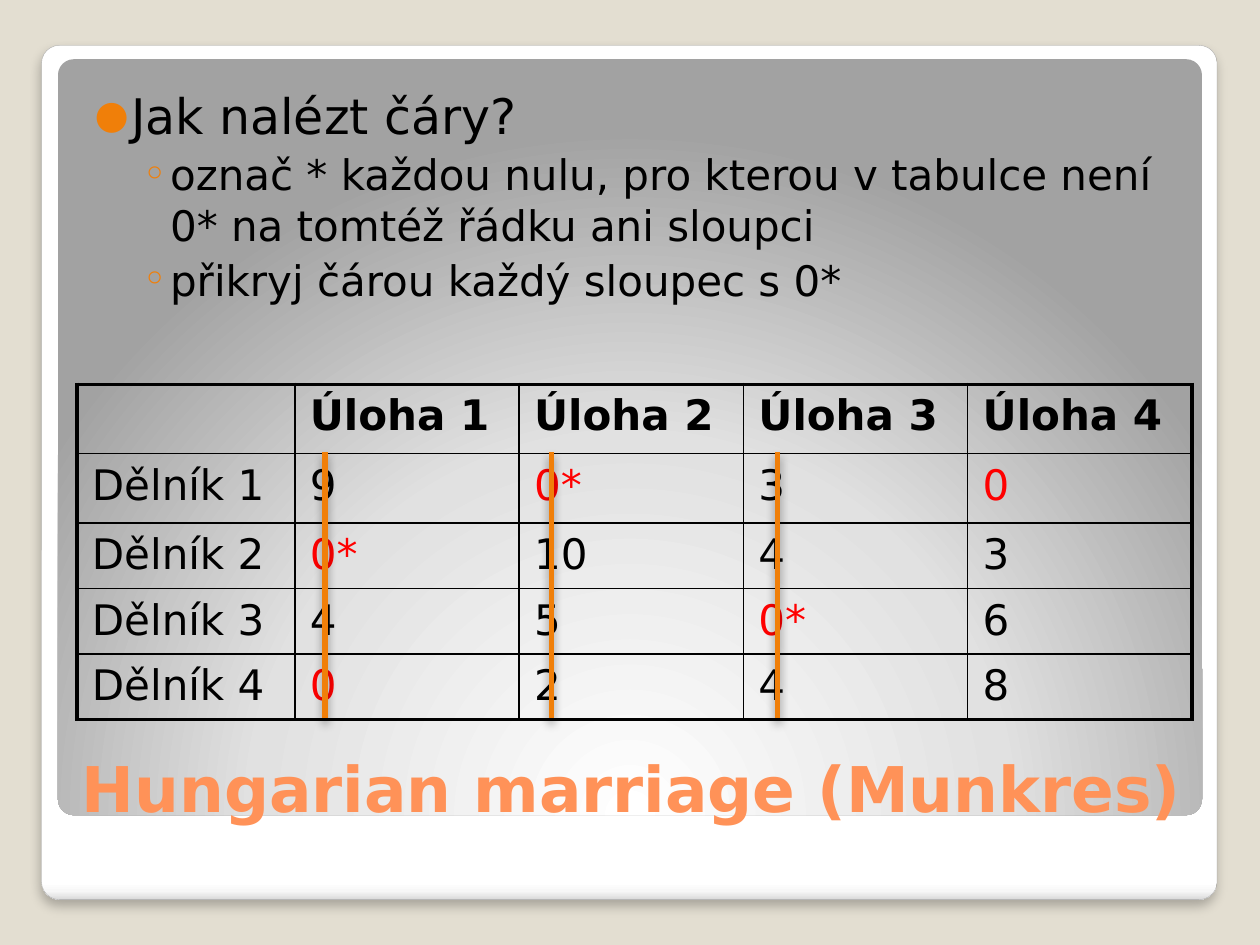
from dataclasses import dataclass

from pptx import Presentation
from pptx.dml.color import RGBColor
from pptx.enum.shapes import MSO_CONNECTOR, MSO_SHAPE
from pptx.enum.text import MSO_ANCHOR, MSO_AUTO_SIZE, PP_ALIGN
from pptx.oxml import parse_xml
from pptx.oxml.ns import nsdecls
from pptx.util import Inches, Pt


@dataclass(frozen=True)
class Theme:
    font: str = "DejaVu Sans"
    background: str = "E3DED1"
    frame_line: str = "A4A4A4"
    title: str = "FF9258"
    text: str = "000000"
    zero: str = "FF0000"
    accent: str = "F07F09"
    title_size: int = 36
    lead_size: int = 28
    body_size: int = 24


@dataclass(frozen=True)
class Shadow:
    alpha: int
    blur: float
    distance: float


@dataclass(frozen=True)
class Panel:
    box: tuple
    stops: tuple
    direction: str


@dataclass(frozen=True)
class Bullet:
    text: str
    size: int
    level: int
    margin: float
    hang: float
    mark: str
    scale: int


THEME = Theme()
FRAME = Panel(
    (0.33, 0.36, 9.33, 6.78),
    ((0, "FFFFFF"), (98, "FFFFFF"), (99, "F7F7F7"), (100, "DADADA")),
    '<a:lin ang="5400000" scaled="0"/>',
)
INNER = Panel(
    (0.46, 0.47, 9.08, 6),
    ((0, "FFFFFF"), (55, "E1E1E1"), (100, "A2A2A2")),
    '<a:path path="circle"><a:fillToRect l="50000" t="175000" r="50000" b="-75000"/></a:path>',
)
BULLETS = (
    Bullet("Jak nalézt čáry?", THEME.lead_size, 0, 0.29, 0.29, "●", 80),
    Bullet("označ * každou nulu, pro kterou v tabulce není 0* na tomtéž řádku ani sloupci",
           THEME.body_size, 1, 0.6, 0.22, "◦", 100),
    Bullet("přikryj čárou každý sloupec s 0*", THEME.body_size, 1, 0.6, 0.22, "◦", 100),
)
COSTS = (
    ("", "Úloha 1", "Úloha 2", "Úloha 3", "Úloha 4"),
    ("Dělník 1", "9", "0*", "3", "0"),
    ("Dělník 2", "0*", "10", "4", "3"),
    ("Dělník 3", "4", "5", "0*", "6"),
    ("Dělník 4", "0", "2", "4", "8"),
)
COL_WIDTHS = (1.73, 1.78, 1.78, 1.78, 1.78)
ROW_HEIGHTS = (0.55, 0.55, 0.49, 0.49, 0.49)


def rgb(color: str) -> RGBColor:
    return RGBColor.from_string(color)


def add_run(p, text: str, size: int, color: str = THEME.text, bold: bool = False) -> None:
    r = p.add_run()
    r.text = text
    r.font.name = THEME.font
    r.font.size = Pt(size)
    r.font.bold = bold
    r.font.color.rgb = rgb(color)


def set_shadow(sp, shadow: Shadow) -> None:
    sp._element.spPr.append(parse_xml(
        f'<a:effectLst {nsdecls("a")}><a:outerShdw blurRad="{Pt(shadow.blur)}" '
        f'dist="{Pt(shadow.distance)}" dir="5400000" algn="t" rotWithShape="0">'
        f'<a:srgbClr val="000000"><a:alpha val="{shadow.alpha * 1000}"/></a:srgbClr>'
        f'</a:outerShdw></a:effectLst>'))


def add_panel(s, panel: Panel):
    sp = s.shapes.add_shape(MSO_SHAPE.ROUNDED_RECTANGLE, *map(Inches, panel.box))
    sp.adjustments[0] = 0.021
    stops = "".join(f'<a:gs pos="{pos * 1000}"><a:srgbClr val="{color}"/></a:gs>'
                    for pos, color in panel.stops)
    sp._element.spPr.insert(2, parse_xml(
        f'<a:gradFill {nsdecls("a")} rotWithShape="1"><a:gsLst>{stops}</a:gsLst>'
        f'{panel.direction}</a:gradFill>'))
    return sp


def add_background(s) -> None:
    s.background.fill.solid()
    s.background.fill.fore_color.rgb = rgb(THEME.background)
    frame = add_panel(s, FRAME)
    frame.line.color.rgb = rgb(THEME.frame_line)
    frame.line.width = Pt(0.16)
    set_shadow(frame, Shadow(25, 6, 4))
    inner = add_panel(s, INNER)
    inner.line.fill.background()
    inner.shadow.inherit = False


def add_title(s, text: str) -> None:
    title = s.shapes.title
    title.left, title.top, title.width, title.height = map(Inches, (0.55, 5.45, 8.95, 1.15))
    s.shapes._spTree.append(title._element)
    tf = title.text_frame
    tf.auto_size = MSO_AUTO_SIZE.NONE
    tf.vertical_anchor = MSO_ANCHOR.BOTTOM
    p = tf.paragraphs[0]
    p.alignment = PP_ALIGN.LEFT
    add_run(p, text, THEME.title_size, THEME.title, True)


def add_bullets(s, bullets: tuple) -> None:
    tf = s.shapes.add_textbox(*map(Inches, (0.55, 0.58, 8.95, 5.28))).text_frame
    tf.word_wrap = True
    tf.margin_left, tf.margin_top, tf.margin_right, tf.margin_bottom = map(
        Inches, (0.2, 0.1, 0.1, 0.05))
    for i, bullet in enumerate(bullets):
        p = tf.add_paragraph() if i else tf.paragraphs[0]
        p.level = bullet.level
        p.space_before = Pt(2.5)
        pPr = p._p.get_or_add_pPr()
        pPr.set("marL", str(Inches(bullet.margin)))
        pPr.set("indent", str(-Inches(bullet.hang)))
        for xml in (f'<a:buClr {nsdecls("a")}><a:srgbClr val="{THEME.accent}"/></a:buClr>',
                    f'<a:buSzPct {nsdecls("a")} val="{bullet.scale * 1000}"/>',
                    f'<a:buFont {nsdecls("a")} typeface="{THEME.font}"/>',
                    f'<a:buChar {nsdecls("a")} char="{bullet.mark}"/>'):
            pPr.append(parse_xml(xml))
        add_run(p, bullet.text, bullet.size)


def set_borders(cell, outer: dict) -> None:
    tcPr = cell._tc.get_or_add_tcPr()
    for side, is_outer in outer.items():
        tcPr.append(parse_xml(
            f'<a:ln{side} {nsdecls("a")} w="{Pt(2.25 if is_outer else 1)}"><a:solidFill>'
            f'<a:srgbClr val="{THEME.text}"/></a:solidFill></a:ln{side}>'))


def add_cost_table(s, rows: tuple) -> None:
    n_rows, n_cols = len(rows), len(rows[0])
    box = (0.61, 3.05, sum(COL_WIDTHS), sum(ROW_HEIGHTS))
    table = s.shapes.add_table(n_rows, n_cols, *map(Inches, box)).table
    table.first_row = table.horz_banding = False
    for col, width in zip(table.columns, COL_WIDTHS):
        col.width = Inches(width)
    for i, (row, height) in enumerate(zip(rows, ROW_HEIGHTS)):
        table.rows[i].height = Inches(height)
        for j, text in enumerate(row):
            cell = table.cell(i, j)
            cell.margin_left = cell.margin_right = Inches(0.12)
            cell.margin_top = cell.margin_bottom = Inches(0.06)
            set_borders(cell, {"L": j == 0, "R": j == n_cols - 1,
                               "T": i == 0, "B": i == n_rows - 1})
            cell.fill.background()
            if text:
                color = THEME.zero if text.startswith("0") else THEME.text
                add_run(cell.text_frame.paragraphs[0], text, THEME.body_size, color, i == 0)


def add_cover_line(s, x: float) -> None:
    line = s.shapes.add_connector(MSO_CONNECTOR.STRAIGHT, *map(Inches, (x, 3.59, x, 5.7)))
    line.line.color.rgb = rgb(THEME.accent)
    line.line.width = Pt(3)
    set_shadow(line, Shadow(40, 5.2, 3))


def main() -> None:
    prs = Presentation()
    prs.slide_width, prs.slide_height = Inches(10), Inches(7.5)
    s = prs.slides.add_slide(prs.slide_layouts[5])
    add_background(s)
    add_title(s, "Hungarian marriage (Munkres)")
    add_bullets(s, BULLETS)
    add_cost_table(s, COSTS)
    for column in range(3):
        add_cover_line(s, 2.58 + 1.795 * column)
    prs.save("out.pptx")


if __name__ == "__main__":
    main()
